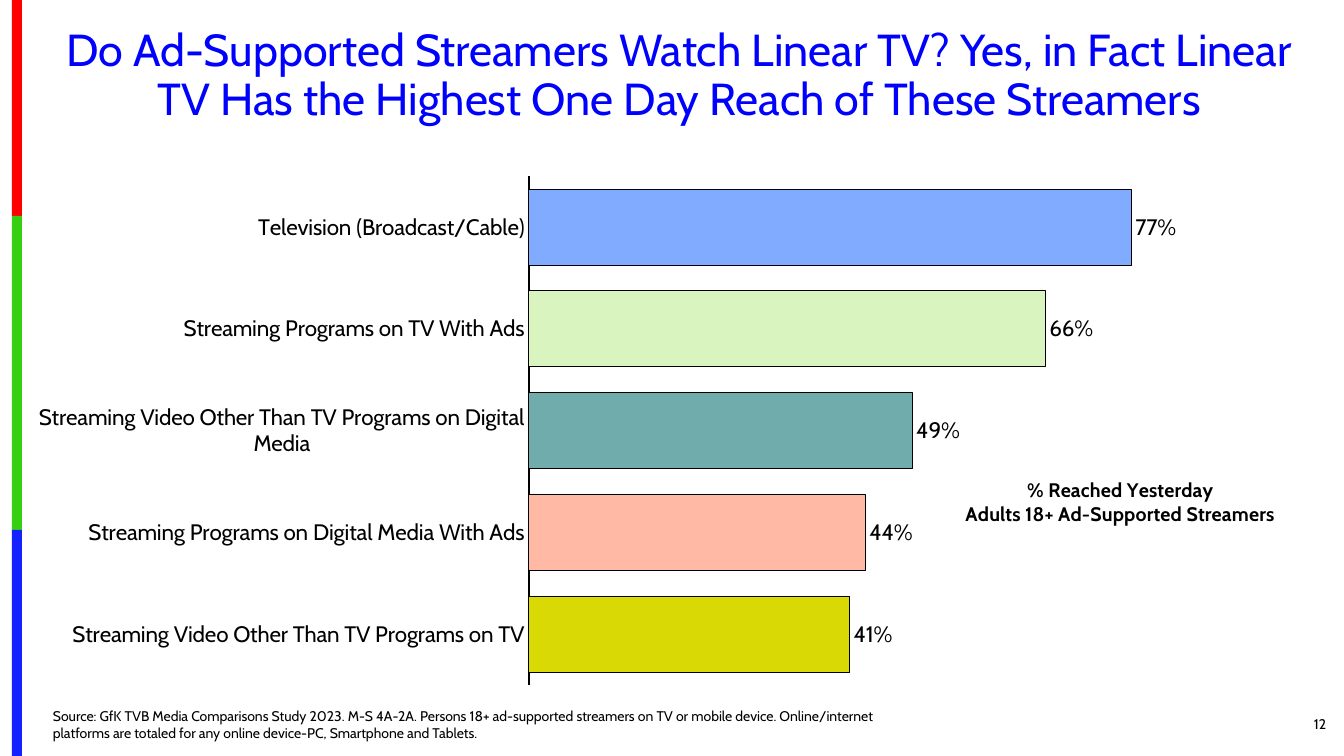
from pptx import Presentation
from pptx.chart.data import CategoryChartData
from pptx.dml.color import RGBColor
from pptx.enum.chart import XL_CHART_TYPE as ChartType, XL_LABEL_POSITION as LabelPosition
from pptx.enum.chart import XL_TICK_MARK as TickMark
from pptx.enum.shapes import MSO_SHAPE as Shape
from pptx.enum.text import MSO_ANCHOR as Anchor, PP_ALIGN as Align
from pptx.oxml import parse_xml
from pptx.oxml.ns import nsdecls, qn
from pptx.util import Pt

PX = 914400 / 100.8
FONT = "Cabin"
BLACK = "000000"
STRIPES = [(0, 216, "FE0000"), (216, 530, "36CF12"), (530, 756, "1322FE")]
REACH = [
    ("Television (Broadcast/Cable)", 0.77, "80ABFF"),
    ("Streaming Programs on TV With Ads", 0.66, "D9F4BE"),
    ("Streaming Video Other Than TV Programs on Digital Media", 0.49, "70ACAC"),
    ("Streaming Programs on Digital Media With Ads", 0.43, "FFB9A4"),
    ("Streaming Video Other Than TV Programs on TV", 0.41, "D9D905"),
]
CUSTOM_LABELS = {3: "44%"}
TITLE = ("Do Ad-Supported Streamers Watch Linear TV? Yes, in Fact Linear TV "
         "Has the Highest One Day Reach of These Streamers")
SOURCE = ("Source: GfK TVB Media Comparisons Study 2023. M-S 4A-2A. Persons 18+ "
          "ad-supported streamers on TV or mobile device. Online/internet platforms "
          "are totaled for any online device-PC, Smartphone and Tablets.")


def px(*lengths):
    return [round(length * PX) for length in lengths]


def color(value):
    return RGBColor.from_string(value)


def style_font(font, size, value=BLACK, bold=False):
    font.name = FONT
    font.size = Pt(size)
    font.bold = bold
    font.color.rgb = color(value)


def fill_text(shape, text, size, align, anchor, value=BLACK):
    frame = shape.text_frame
    frame.text = text
    frame.word_wrap = True
    frame.vertical_anchor = anchor
    paragraph = frame.paragraphs[0]
    paragraph.alignment = align
    style_font(paragraph.runs[0].font, size, value)
    return paragraph


def add_title(slide):
    title = slide.shapes.title
    title.left, title.top, title.width, title.height = px(33, 23, 1293, 120)
    paragraph = fill_text(title, TITLE, 32, Align.CENTER, Anchor.TOP, "0000FF")
    paragraph.line_spacing = 0.9


def add_text(slide, box, text, align, anchor):
    fill_text(slide.shapes.add_textbox(*px(*box)), text, 10, align, anchor)


def add_stripe(slide, top, bottom, value):
    stripe = slide.shapes.add_shape(Shape.RECTANGLE, *px(12, top, 10, bottom - top))
    stripe.shadow.inherit = False
    stripe.fill.solid()
    stripe.fill.fore_color.rgb = color(value)
    stripe.line.fill.background()


def set_layout(element, index, target="", **edges):
    for layout in element.findall(qn("c:layout")):
        element.remove(layout)
    parts = [f'<c:layoutTarget val="{target}"/>'] if target else []
    parts += [f'<c:{edge}Mode val="edge"/>' for edge in "xy"]
    parts += [f'<c:{edge} val="{value}"/>' for edge, value in edges.items()]
    element.insert(index, parse_xml(
        f'<c:layout {nsdecls("c")}><c:manualLayout>{"".join(parts)}'
        '</c:manualLayout></c:layout>'))


def format_axes(chart):
    categories = chart.category_axis
    categories.reverse_order = True
    categories.major_tick_mark = TickMark.NONE
    categories.minor_tick_mark = TickMark.NONE
    categories.format.line.color.rgb = color(BLACK)
    categories.format.line.width = Pt(1.5)
    style_font(categories.tick_labels.font, 16)
    values = chart.value_axis
    values.minimum_scale, values.maximum_scale = 0, 0.9
    values.has_major_gridlines = False
    values.visible = False


def format_bars(plot):
    plot.gap_width = 34
    plot.vary_by_categories = False
    series = plot.series[0]
    labels = series.data_labels
    labels.show_value = True
    labels.number_format = "0%"
    labels.number_format_is_linked = False
    labels.position = LabelPosition.OUTSIDE_END
    style_font(labels.font, 16)
    for index, (_, _, value) in enumerate(REACH):
        bar = series.points[index].format
        bar.fill.solid()
        bar.fill.fore_color.rgb = color(value)
        bar.line.color.rgb = color(BLACK)
        bar.line.width = Pt(0.75)
    for index, text in CUSTOM_LABELS.items():
        label = series.points[index].data_label
        label.text_frame.text = text
        style_font(label.text_frame.paragraphs[0].runs[0].font, 16)
        label.position = LabelPosition.OUTSIDE_END


def add_reach_chart(slide):
    data = CategoryChartData(number_format="0%")
    data.categories = [name for name, _, _ in REACH]
    data.add_series("Series 1", [share for _, share, _ in REACH])
    chart = slide.shapes.add_chart(
        ChartType.BAR_CLUSTERED, *px(25, 151, 1302, 538), data).chart
    chart.has_legend = False
    style_font(chart.font, 10)
    frame = chart.chart_title.text_frame
    frame.text = "% Reached Yesterday\nAdults 18+ Ad-Supported Streamers"
    for paragraph in frame.paragraphs:
        style_font(paragraph.runs[0].font, 14, bold=True)
    chart.chart_title.include_in_layout = False
    format_axes(chart)
    format_bars(chart.plots[0])
    chart_element = chart.element.find(qn("c:chart"))
    set_layout(chart_element.find(qn("c:title")), 1, x=0.72, y=0.6)
    set_layout(chart_element.find(qn("c:plotArea")), 0, "inner",
               x=0.387, y=0.047, w=0.541, h=0.946)


def main():
    presentation = Presentation()
    presentation.slide_width, presentation.slide_height = px(1344, 756)
    slide = presentation.slides.add_slide(presentation.slide_layouts[5])
    for stripe in STRIPES:
        add_stripe(slide, *stripe)
    add_title(slide)
    add_text(slide, (1227, 704, 109, 40), "12", Align.RIGHT, Anchor.MIDDLE)
    add_text(slide, (43, 702, 864, 44), SOURCE, Align.LEFT, Anchor.BOTTOM)
    add_reach_chart(slide)
    presentation.save("out.pptx")


if __name__ == "__main__":
    main()
